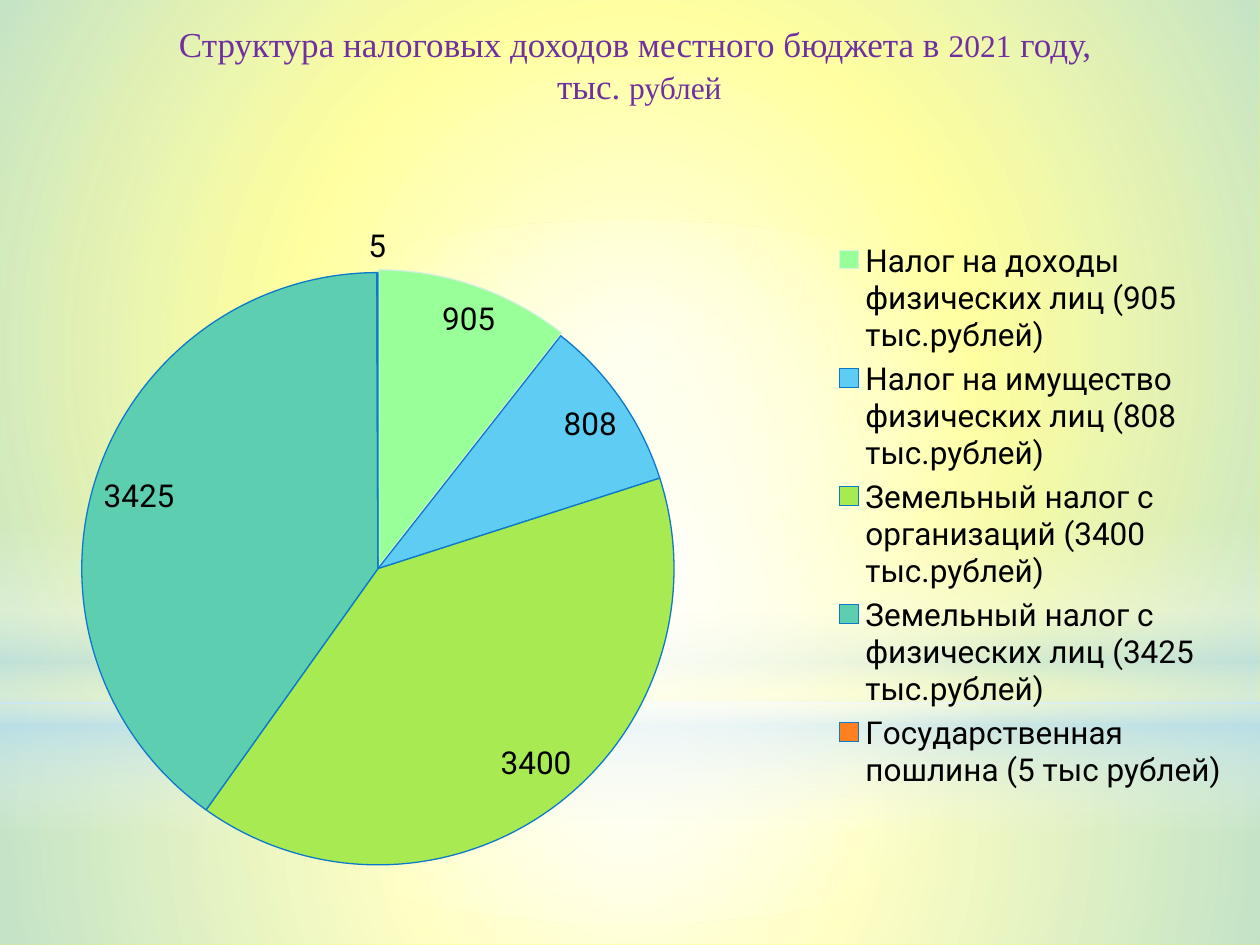
import lxml.etree
import pptx
import pptx.chart.data
import pptx.dml.color
import pptx.enum.chart
import pptx.enum.shapes
import pptx.enum.text
import pptx.oxml
import pptx.oxml.ns
import pptx.util

RGBColor = pptx.dml.color.RGBColor
YELLOW = RGBColor(0xFF, 0xFF, 0x00)
WHITE = RGBColor(0xFF, 0xFF, 0xFF)
SKY = RGBColor(0xB4, 0xDC, 0xFA)
PURPLE = RGBColor(0x70, 0x30, 0xA0)
BLACK = RGBColor(0x00, 0x00, 0x00)
BLUE = RGBColor(0x0D, 0x79, 0xCA)
MINT = RGBColor(0xD9, 0xF0, 0xE0)

WIDTH = pptx.util.Inches(10)
HEIGHT = pptx.util.Inches(7.5)
SHAPES = pptx.enum.shapes.MSO_SHAPE
CIRCLE = ('<a:path path="circle"><a:fillToRect l="50000" t="50000" '
          'r="50000" b="50000"/></a:path>')
DOWNWARD = '<a:lin ang="5400000" scaled="0"/>'

BACKDROP = [
    (SHAPES.RECTANGLE, (0, 0.744, 1, 0.256), CIRCLE,
     [(0, WHITE, 91), (37, WHITE, 76), (100, SKY, 79)]),
    (SHAPES.RECTANGLE, (0, 0, 1, 0.744), CIRCLE,
     [(0, WHITE, 89), (48, WHITE, 62), (100, SKY, 79)]),
    (SHAPES.RECTANGLE, (0, 0.55, 1, 0.333), DOWNWARD,
     [(0, WHITE, 0), (29, WHITE, 30), (45, SKY, 40),
      (55, WHITE, 26), (65, SKY, 60), (100, WHITE, 0)]),
    (SHAPES.OVAL, (0, 0.233, 1, 0.744), CIRCLE,
     [(0, WHITE, 100), (56, WHITE, 0)]),
]

TAXES = [
    ("Налог на доходы физических лиц (905 тыс.рублей)", 905,
     RGBColor(0x99, 0xFF, 0x99)),
    ("Налог на имущество физических лиц (808 тыс.рублей)", 808,
     RGBColor(0x5E, 0xCC, 0xF3)),
    ("Земельный налог с организаций (3400 тыс.рублей)", 3400,
     RGBColor(0xA7, 0xEA, 0x52)),
    ("Земельный налог с физических лиц (3425 тыс.рублей)", 3425,
     RGBColor(0x5D, 0xCE, 0xAF)),
    ("Государственная пошлина (5 тыс рублей)", 5,
     RGBColor(0xFF, 0x80, 0x21)),
]

TITLE = [
    [("Структура налоговых доходов местного бюджета в ", 20),
     ("2021", 18), (" году, ", 20)],
    [("тыс. ", 20), ("рублей", 18)],
]


def apply_format(target, values):
    for name, value in values.items():
        setattr(target, name, value)


def place(left, top, width, height):
    return (round(left * WIDTH), round(top * HEIGHT),
            round(width * WIDTH), round(height * HEIGHT))


def add_gradient_shape(slide, kind, share, direction, stops):
    shape = slide.shapes.add_shape(kind, *place(*share))
    shape.shadow.inherit = False
    shape.line.fill.background()
    stop_xml = "".join(
        f'<a:gs pos="{position * 1000}"><a:srgbClr val="{color}">'
        f'<a:alpha val="{opacity * 1000}"/></a:srgbClr></a:gs>'
        for position, color, opacity in stops)
    gradient = pptx.oxml.parse_xml(
        f'<a:gradFill {pptx.oxml.ns.nsdecls("a")} rotWithShape="1">'
        f'<a:gsLst>{stop_xml}</a:gsLst>{direction}</a:gradFill>')
    geometry = shape._element.spPr.find(pptx.oxml.ns.qn("a:prstGeom"))
    geometry.addnext(gradient)


def set_layout(element, index, values, inner=False):
    for old in element.findall(pptx.oxml.ns.qn("c:layout")):
        element.remove(old)
    settings = [("xMode", "edge"), ("yMode", "edge"), *zip("xywh", values)]
    if inner:
        settings.insert(0, ("layoutTarget", "inner"))
    layout = lxml.etree.Element(pptx.oxml.ns.qn("c:layout"))
    manual = lxml.etree.SubElement(layout, pptx.oxml.ns.qn("c:manualLayout"))
    for name, value in settings:
        lxml.etree.SubElement(manual, pptx.oxml.ns.qn(f"c:{name}"),
                              val=str(value))
    element.insert(index, layout)


def add_tax_chart(slide):
    data = pptx.chart.data.CategoryChartData()
    data.categories = [name for name, value, color in TAXES]
    data.add_series("Series 1", [value for name, value, color in TAXES])
    chart = slide.shapes.add_chart(
        pptx.enum.chart.XL_CHART_TYPE.PIE,
        *place(0.02, 0.112, 0.967, 0.861), data).chart
    apply_format(chart, {"has_title": False, "has_legend": True})
    apply_format(chart.font, {"size": pptx.util.Pt(18), "name": "Roboto"})
    chart.font.color.rgb = BLACK
    apply_format(chart.legend, {
        "position": pptx.enum.chart.XL_LEGEND_POSITION.RIGHT,
        "include_in_layout": False})
    set_layout(chart.legend._element, 1, (0.66, 0.16, 0.33, 0.69))
    set_layout(chart._chartSpace.chart.plotArea, 0,
               (0.024, 0.205, 0.531, 0.728), inner=True)

    plot = chart.plots[0]
    apply_format(plot, {"vary_by_categories": True, "has_data_labels": True})
    apply_format(plot.data_labels, {
        "show_value": True, "show_percentage": False,
        "position": pptx.enum.chart.XL_LABEL_POSITION.BEST_FIT})
    for index, (name, value, color) in enumerate(TAXES):
        slice_format = plot.series[0].points[index].format
        slice_format.fill.solid()
        slice_format.fill.fore_color.rgb = color
        slice_format.line.color.rgb = BLUE if index else MINT
        slice_format.line.width = pptx.util.Pt(0.75)
    first_slice = plot.series[0]._element.find(pptx.oxml.ns.qn("c:dPt"))
    explosion = lxml.etree.Element(pptx.oxml.ns.qn("c:explosion"), val="1")
    first_slice.find(pptx.oxml.ns.qn("c:spPr")).addprevious(explosion)


def add_title(slide):
    title = slide.shapes.title
    slide.shapes._spTree.append(title._element)
    apply_format(title, dict(zip(("left", "top", "width", "height"),
                                 place(0.051, 0.017, 0.913, 0.103))))
    frame = title.text_frame
    apply_format(frame, {
        "word_wrap": True,
        "auto_size": pptx.enum.text.MSO_AUTO_SIZE.NONE,
        "vertical_anchor": pptx.enum.text.MSO_ANCHOR.TOP})
    for index, pieces in enumerate(TITLE):
        paragraph = frame.add_paragraph() if index else frame.paragraphs[0]
        apply_format(paragraph, {
            "alignment": pptx.enum.text.PP_ALIGN.CENTER,
            "space_before": pptx.util.Pt(0)})
        for text, size in pieces:
            run = paragraph.add_run()
            run.text = text
            apply_format(run.font, {"name": "Times New Roman",
                                    "size": pptx.util.Pt(size)})
            run.font.color.rgb = PURPLE


def main():
    presentation = pptx.Presentation()
    apply_format(presentation, {"slide_width": WIDTH, "slide_height": HEIGHT})
    slide = presentation.slides.add_slide(presentation.slide_layouts[5])
    slide.background.fill.solid()
    slide.background.fill.fore_color.rgb = YELLOW
    for layer in BACKDROP:
        add_gradient_shape(slide, *layer)
    add_tax_chart(slide)
    add_title(slide)
    presentation.save("out.pptx")


if __name__ == "__main__":
    main()
